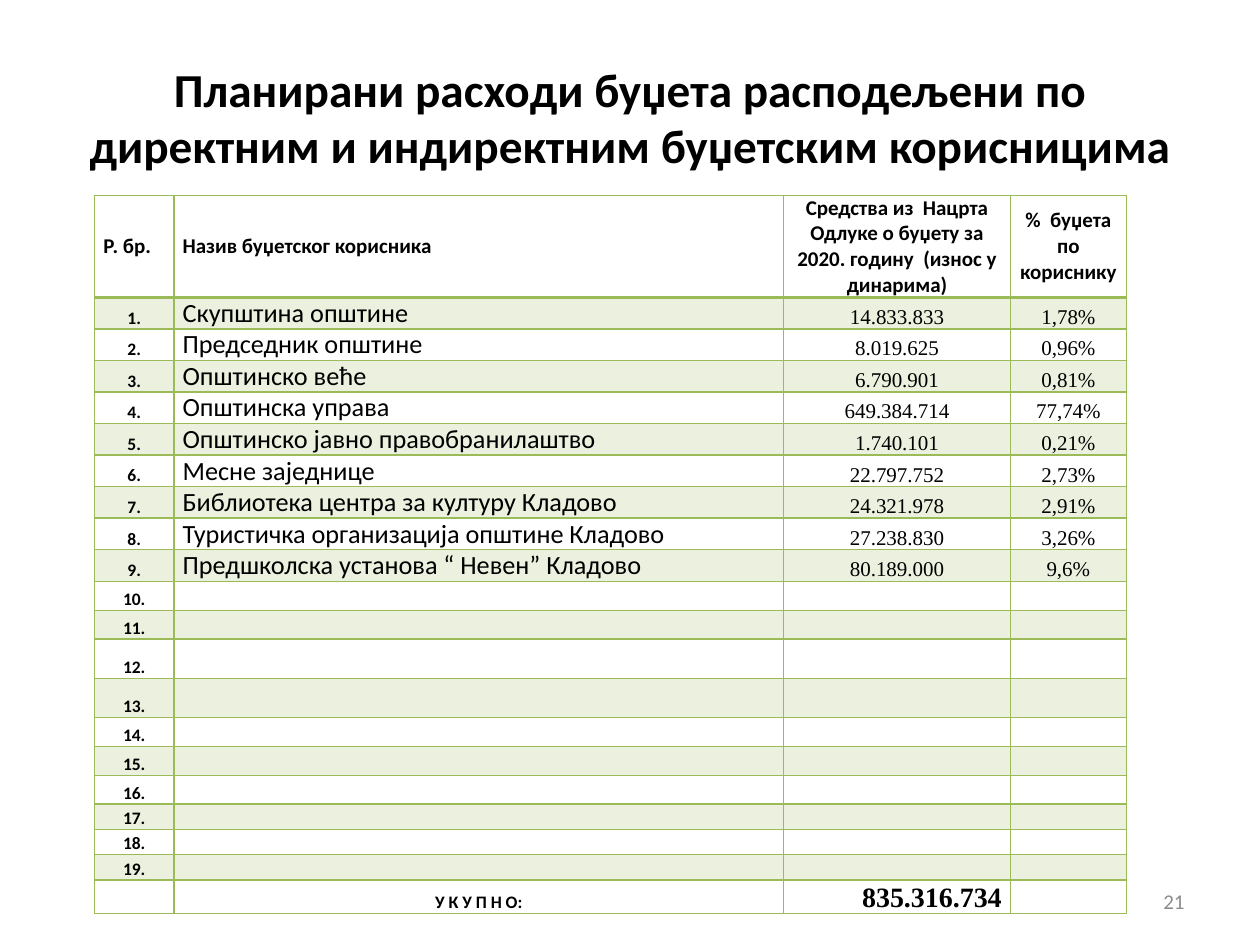
from dataclasses import dataclass

from lxml import etree
from pptx import Presentation
from pptx.dml.color import RGBColor
from pptx.enum.text import MSO_ANCHOR, PP_ALIGN
from pptx.oxml.ns import qn
from pptx.util import Inches, Pt

LEFT, CENTER, RIGHT = PP_ALIGN.LEFT, PP_ALIGN.CENTER, PP_ALIGN.RIGHT
MIDDLE, BOTTOM = MSO_ANCHOR.MIDDLE, MSO_ANCHOR.BOTTOM
GREEN, PALE_GREEN, BLACK, GRAY = "9BBB59", "EBF1DE", "000000", "8C8C8C"
SANS, SERIF = "Calibri", "Times New Roman"
COLUMN_WIDTHS = (0.63, 4.84, 1.8, 0.92)
ROW_HEIGHTS = (0.81, *[0.25] * 9, 0.23, 0.23, 0.31, 0.31, *[0.23] * 3, *[0.2] * 3, 0.25)
HEADERS = (
    "Р. бр.",
    "Назив буџетског корисника",
    "Средства из  Нацрта Одлуке о буџету за 2020. годину  (износ у динарима)",
    "%  буџета по кориснику",
)
BENEFICIARIES = (
    ("Скупштина општине", "14.833.833", "1,78%"),
    ("Председник општине", "8.019.625", "0,96%"),
    ("Општинско веће", "6.790.901", "0,81%"),
    ("Општинска управа", "649.384.714", "77,74%"),
    ("Општинско јавно правобранилаштво", "1.740.101", "0,21%"),
    ("Месне заједнице", "22.797.752", "2,73%"),
    ("Библиотека центра за културу Кладово", "24.321.978", "2,91%"),
    ("Туристичка организација општине Кладово", "27.238.830", "3,26%"),
    ("Предшколска установа “ Невен” Кладово", "80.189.000", "9,6%"),
)
NUMBERED_ROWS = 19


@dataclass(frozen=True)
class TextStyle:
    size: float
    bold: bool = False
    font: str = SANS
    align: PP_ALIGN = CENTER
    anchor: MSO_ANCHOR = BOTTOM
    color: str = BLACK


TITLE = TextStyle(27, True, anchor=MIDDLE)
PAGE_NUMBER = TextStyle(12, align=RIGHT, anchor=MIDDLE, color=GRAY)
HEADER_LEFT = TextStyle(12, True, align=LEFT, anchor=MIDDLE)
HEADER_CENTER = TextStyle(12, True, anchor=MIDDLE)
NUMBER = TextStyle(10, True)
NAME = TextStyle(15, align=LEFT)
AMOUNT = TextStyle(12, font=SERIF)
TOTAL = TextStyle(16, True, SERIF, RIGHT)
HEADER_STYLES = (HEADER_LEFT, HEADER_LEFT, HEADER_CENTER, HEADER_CENTER)
BODY_STYLES = (NUMBER, NAME, AMOUNT, AMOUNT)
EMPTY_STYLES = (NUMBER,) * 4
TOTAL_STYLES = (NUMBER, NUMBER, TOTAL, NUMBER)


def rgb(value: str) -> RGBColor:
    """Turn a hex string into a colour."""
    return RGBColor.from_string(value)


def style_paragraph(paragraph, style: TextStyle) -> None:
    """Apply alignment and font to a paragraph."""
    paragraph.alignment = style.align
    paragraph.font.size = Pt(style.size)
    paragraph.font.bold = style.bold
    paragraph.font.name = style.font
    paragraph.font.color.rgb = rgb(style.color)


def add_text(slide, text: str, style: TextStyle, left: float, top: float,
             width: float, height: float) -> None:
    """Add a wrapped text box."""
    shape = slide.shapes.add_textbox(Inches(left), Inches(top), Inches(width), Inches(height))
    shape.text_frame.word_wrap = True
    shape.text_frame.vertical_anchor = style.anchor
    shape.text_frame.text = text
    style_paragraph(shape.text_frame.paragraphs[0], style)


def set_borders(cell, widths: dict[str, float]) -> None:
    """Draw green borders of the given point widths on a cell."""
    properties = cell._tc.get_or_add_tcPr()
    for position, (side, width) in enumerate(widths.items()):
        line = etree.Element(qn(f"a:{side}"), w=str(Pt(width)))
        fill = etree.SubElement(line, qn("a:solidFill"))
        etree.SubElement(fill, qn("a:srgbClr"), val=GREEN)
        properties.insert(position, line)


def fill_cell(cell, text: str, style: TextStyle, row: int) -> None:
    """Write one cell with its margins, band and borders."""
    cell.margin_left = cell.margin_right = Inches(0.07)
    cell.margin_top = cell.margin_bottom = Inches(0)
    cell.vertical_anchor = style.anchor
    cell.text = text
    style_paragraph(cell.text_frame.paragraphs[0], style)
    if row % 2 and row <= NUMBERED_ROWS:
        cell.fill.solid()
        cell.fill.fore_color.rgb = rgb(PALE_GREEN)
    else:
        cell.fill.background()
    set_borders(cell, {"lnL": 1, "lnR": 1, "lnT": 2 if row == 1 else 1,
                       "lnB": 2 if row == 0 else 1})


def table_rows() -> list[tuple]:
    """Pair the texts of every row with their styles."""
    rows = [(HEADERS, HEADER_STYLES)]
    for number in range(1, NUMBERED_ROWS + 1):
        if number <= len(BENEFICIARIES):
            rows.append(((f"{number}.", *BENEFICIARIES[number - 1]), BODY_STYLES))
        else:
            rows.append(((f"{number}.", "", "", ""), EMPTY_STYLES))
    rows.append((("", "У К У П Н О:", "835.316.734", ""), TOTAL_STYLES))
    return rows


def add_budget_table(slide) -> None:
    """Add the table of budget beneficiaries."""
    table = slide.shapes.add_table(
        len(ROW_HEIGHTS), len(COLUMN_WIDTHS), Inches(0.75), Inches(1.55),
        Inches(sum(COLUMN_WIDTHS)), Inches(sum(ROW_HEIGHTS))).table
    table.first_row = table.horz_banding = False
    for column, width in zip(table.columns, COLUMN_WIDTHS):
        column.width = Inches(width)
    for row, height in zip(table.rows, ROW_HEIGHTS):
        row.height = Inches(height)
    for row, (texts, styles) in enumerate(table_rows()):
        for column, (text, style) in enumerate(zip(texts, styles)):
            fill_cell(table.cell(row, column), text, style, row)


def main() -> None:
    """Build and save the slide."""
    presentation = Presentation()
    presentation.slide_width, presentation.slide_height = Inches(10), Inches(7.5)
    slide = presentation.slides.add_slide(presentation.slide_layouts[6])
    add_text(slide, "Планирани расходи буџета расподељени по директним и индиректним "
             "буџетским корисницима", TITLE, 0.5, 0.3, 9, 1.25)
    add_budget_table(slide)
    add_text(slide, "21", PAGE_NUMBER, 7.17, 6.95, 2.33, 0.4)
    presentation.save("out.pptx")


if __name__ == "__main__":
    main()
